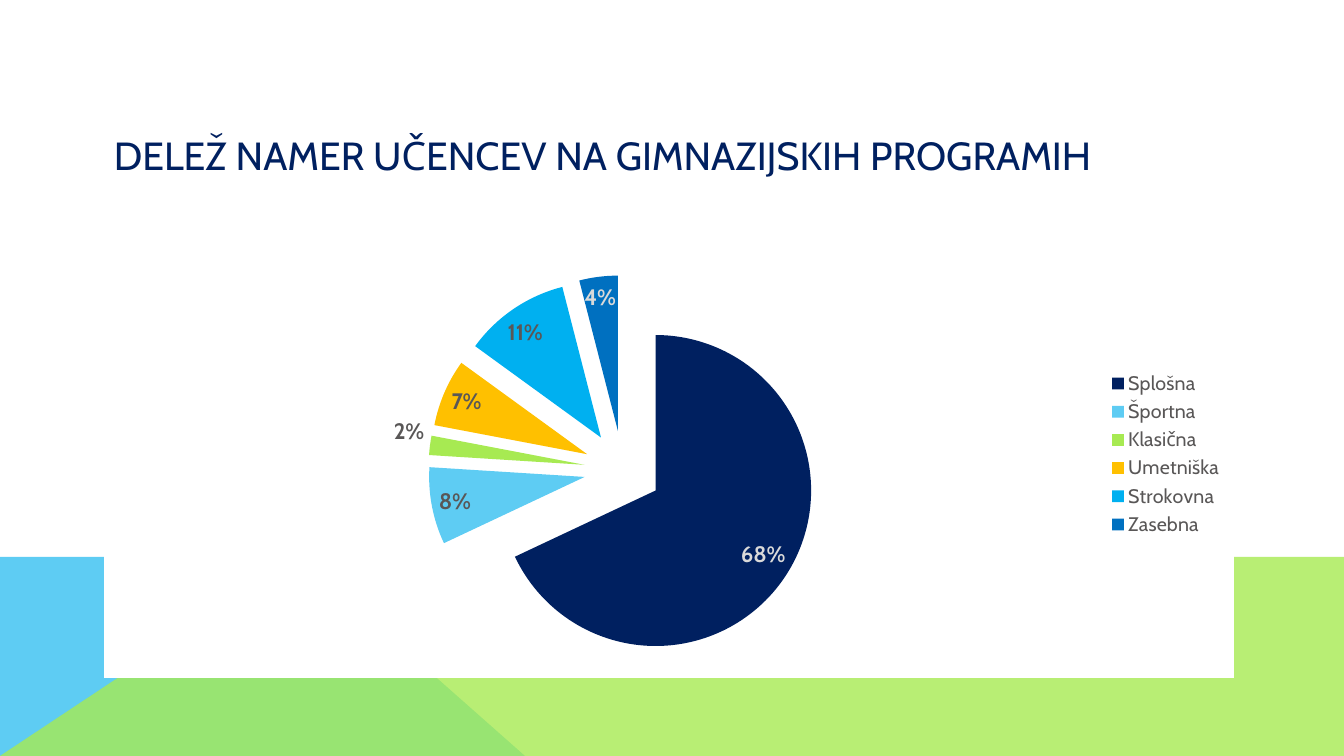
from lxml import etree
from pptx import Presentation
from pptx.chart.data import CategoryChartData
from pptx.dml.color import RGBColor
from pptx.enum.chart import XL_CHART_TYPE, XL_LABEL_POSITION, XL_LEGEND_POSITION
from pptx.enum.text import MSO_ANCHOR
from pptx.oxml import parse_xml
from pptx.oxml.ns import nsdecls, qn
from pptx.util import Pt

EMU_PER_PX = 914400 / 100.8
PIE = XL_CHART_TYPE.PIE
BEST_FIT = XL_LABEL_POSITION.BEST_FIT
LEGEND_RIGHT = XL_LEGEND_POSITION.RIGHT
MIDDLE = MSO_ANCHOR.MIDDLE

FONT = "Cabin"
NAVY = "002060"
GREY = "595757"
PALE = "D9D9D9"
SHARES = [
    ("Splošna", 68, NAVY, PALE),
    ("Športna", 8, "5ECCF3", GREY),
    ("Klasična", 2, "A7EA52", GREY),
    ("Umetniška", 7, "FFC000", GREY),
    ("Strokovna", 11, "00B0F0", GREY),
    ("Zasebna", 4, "0070C0", PALE),
]


def px(length):
    return round(length * EMU_PER_PX)


def color(hex_value):
    return RGBColor.from_string(hex_value)


def set_font(font, hex_value, size, bold=False):
    for name, value in {"name": FONT, "size": Pt(size), "bold": bold}.items():
        setattr(font, name, value)
    font.color.rgb = color(hex_value)


def fill_solid(fill, hex_value):
    fill.solid()
    fill.fore_color.rgb = color(hex_value)


def add_polygon(slide, points, hex_value):
    builder = slide.shapes.build_freeform(*points[0], scale=EMU_PER_PX)
    builder.add_line_segments(points[1:], close=True)
    shape = builder.convert_to_shape()
    shape.shadow.inherit = False
    shape.line.fill.background()
    fill_solid(shape.fill, hex_value)
    return shape


def add_band(slide, left, top, width, height):
    right, bottom = left + width, top + height
    add_polygon(
        slide,
        [(left, bottom), (left, top), (left + 300, top), (left + 525, bottom)],
        "5ECCF3",
    )
    green = add_polygon(
        slide,
        [(left, bottom), (left + 300, top), (right, top), (right, bottom)],
        "A7EA52",
    )
    fill_color = green.fill._xPr.find(qn("a:solidFill"))[0]
    etree.SubElement(fill_color, qn("a:alpha")).set("val", "80000")


def add_title(slide, left, top, width, height):
    box = slide.shapes.add_textbox(px(left), px(top), px(width), px(height))
    frame = box.text_frame
    frame.word_wrap = True
    frame.vertical_anchor = MIDDLE
    run = frame.paragraphs[0].add_run()
    run.text = "DELEŽ NAMER UČENCEV NA GIMNAZIJSKIH PROGRAMIH"
    set_font(run.font, NAVY, 28)


def style_labels(series):
    labels = series.data_labels
    label_format = {
        "show_percentage": True,
        "show_value": False,
        "number_format": "0%",
        "number_format_is_linked": False,
        "position": BEST_FIT,
    }
    for name, value in label_format.items():
        setattr(labels, name, value)
    set_font(labels.font, GREY, 16, True)
    for index, (_, _, slice_color, label_color) in enumerate(SHARES):
        point = series.points[index]
        fill_solid(point.format.fill, slice_color)
        if label_color != GREY:
            set_font(point.data_label.font, label_color, 16, True)
            point.data_label.position = BEST_FIT
    for label in series._element.iter(qn("c:dLbl")):
        label.find(qn("c:showVal")).set("val", "0")
        label.find(qn("c:showPercent")).set("val", "1")


def add_pie(slide, left, top, width, height):
    data = CategoryChartData()
    data.categories = [share[0] for share in SHARES]
    data.add_series("Series 1", [share[1] for share in SHARES])
    chart = slide.shapes.add_chart(
        PIE, px(left), px(top), px(width), px(height), data
    ).chart
    chart.has_title = False
    set_font(chart.font, "000000", 10)
    chart.has_legend = True
    chart.legend.position = LEGEND_RIGHT
    chart.legend.include_in_layout = False
    set_font(chart.legend.font, GREY, 14)
    chart.plots[0].vary_by_categories = True
    series = chart.plots[0].series[0]
    style_labels(series)
    series._element.find(qn("c:tx")).addnext(
        parse_xml(f'<c:explosion {nsdecls("c")} val="25"/>')
    )
    chart._chartSpace.find(qn("c:chart")).addnext(
        parse_xml(
            f'<c:spPr {nsdecls("c", "a")}><a:solidFill><a:srgbClr val="FFFFFF"/>'
            "</a:solidFill><a:ln><a:noFill/></a:ln></c:spPr>"
        )
    )


def main():
    presentation = Presentation()
    presentation.slide_width = px(1344)
    presentation.slide_height = px(756)
    slide = presentation.slides.add_slide(presentation.slide_layouts[6])
    add_band(slide, 0, 557, 1344, 199)
    add_title(slide, 104, 125, 1074, 60)
    add_pie(slide, 104, 230, 1130, 448)
    presentation.save("out.pptx")


if __name__ == "__main__":
    main()
